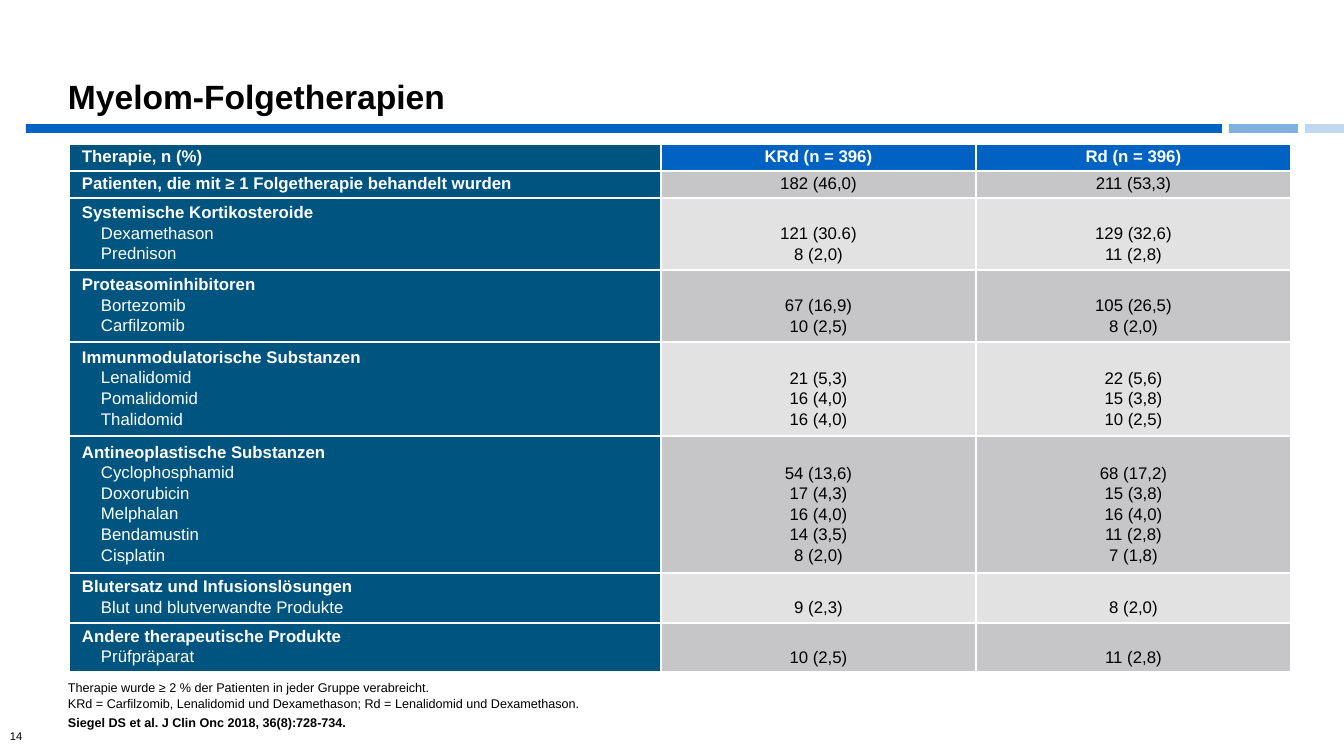
"""Builds the slide on follow-up myeloma therapies."""
from lxml.etree import SubElement as Sub
from pptx import Presentation
from pptx.dml.color import RGBColor as Rgb
from pptx.enum.shapes import MSO_SHAPE as Kind
from pptx.enum.text import MSO_ANCHOR as Anchor, PP_ALIGN as Align
from pptx.oxml.ns import qn
from pptx.util import Pt

THEME = {
    "face": "Arial", "black": "000000", "white": "FFFFFF",
    "blue": "0063C3", "teal": "005480", "dark": "C6C5C7", "pale": "E3E2E3",
    "title": 24, "body": 12, "note": 9, "page": 8, "rule": 2.25,
}
WIDE, HIGH = 1344, 756
SCALE = 12192000 / WIDE


def px(num):
    return round(num * SCALE)


def write(frame, lines, size, color, line=1.0, form=None):
    frame.word_wrap = True
    for i, (text, bold, after, dent) in enumerate(lines):
        par = frame.paragraphs[0] if i == 0 else frame.add_paragraph()
        if dent:
            par._p.get_or_add_pPr().set("marL", str(px(dent)))
        look = {"line_spacing": line, "space_after": Pt(after), **(form or {})}
        for key, val in look.items():
            setattr(par, key, val)
        run = par.add_run()
        run.text = text
        font = {"name": THEME["face"], "size": Pt(THEME[size]), "bold": bold}
        for key, val in font.items():
            setattr(run.font, key, val)
        run.font.color.rgb = Rgb.from_string(THEME[color])


deck = Presentation()
deck.slide_width, deck.slide_height = px(WIDE), px(HIGH)
slide = deck.slides.add_slide(deck.slide_layouts[6])
shapes = slide.shapes

for left, width, alpha in [(26, 1196, 100), (1229, 69, 50), (1305, 39, 25)]:
    bar = shapes.add_shape(Kind.RECTANGLE, px(left), px(124), px(width), px(9))
    bar.shadow.inherit = False
    bar.line.fill.background()
    bar.fill.solid()
    bar.fill.fore_color.rgb = Rgb.from_string(THEME["blue"])
    if alpha < 100:
        tint = bar._element.spPr.find(qn("a:solidFill"))[0]
        Sub(tint, qn("a:alpha")).set("val", str(alpha * 1000))

notes = [
    ("Therapie wurde ≥ 2 % der Patienten in jeder Gruppe verabreicht.", False, 0, 0),
    ("KRd = Carfilzomib, Lenalidomid und Dexamethason; "
     "Rd = Lenalidomid und Dexamethason.", False, 3, 0),
    ("Siegel DS et al. J Clin Onc 2018, 36(8):728-734.", True, 0, 0),
]
boxes = [
    ((58, 0, 1235, 122), [("Myelom-Folgetherapien", True, 0, 0)], "title", 0.9, Anchor.BOTTOM),
    ((58, 675, 1114, 60), notes, "note", 1.0, Anchor.BOTTOM),
    ((0, 724, 67, 24), [("14", False, 0, 0)], "page", 1.0, Anchor.TOP),
]
for place, lines, size, line, anchor in boxes:
    frame = shapes.add_textbox(*map(px, place)).text_frame
    frame.vertical_anchor = anchor
    write(frame, lines, size, "black", line)

rows = [
    (27, ["Therapie, n (%)"], ["KRd (n = 396)"], ["Rd (n = 396)"]),
    (27, ["Patienten, die mit ≥ 1 Folgetherapie behandelt wurden"],
     ["182 (46,0)"], ["211 (53,3)"]),
    (72, ["Systemische Kortikosteroide", "Dexamethason", "Prednison"],
     ["121 (30.6)", "8 (2,0)"], ["129 (32,6)", "11 (2,8)"]),
    (72, ["Proteasominhibitoren", "Bortezomib", "Carfilzomib"],
     ["67 (16,9)", "10 (2,5)"], ["105 (26,5)", "8 (2,0)"]),
    (94, ["Immunmodulatorische Substanzen", "Lenalidomid", "Pomalidomid", "Thalidomid"],
     ["21 (5,3)", "16 (4,0)", "16 (4,0)"], ["22 (5,6)", "15 (3,8)", "10 (2,5)"]),
    (137, ["Antineoplastische Substanzen", "Cyclophosphamid", "Doxorubicin",
           "Melphalan", "Bendamustin", "Cisplatin"],
     ["54 (13,6)", "17 (4,3)", "16 (4,0)", "14 (3,5)", "8 (2,0)"],
     ["68 (17,2)", "15 (3,8)", "16 (4,0)", "11 (2,8)", "7 (1,8)"]),
    (50, ["Blutersatz und Infusionslösungen", "Blut und blutverwandte Produkte"],
     ["9 (2,3)"], ["8 (2,0)"]),
    (49, ["Andere therapeutische Produkte", "Prüfpräparat"],
     ["10 (2,5)"], ["11 (2,8)"]),
]
cols = [592, 315, 315]
tall = sum(row[0] for row in rows)
grid = shapes.add_table(len(rows), len(cols), px(69), px(144), px(sum(cols)), px(tall)).table
for col, width in zip(grid.columns, cols):
    col.width = px(width)

for r, (height, *parts) in enumerate(rows):
    grid.rows[r].height = px(height)
    for c, texts in enumerate(parts):
        cell = grid.cell(r, c)
        head, label = r == 0, c == 0
        side = 13 if head or label else 4
        drop = 0 if label or len(parts[0]) == 1 else 21
        form = {
            "margin_left": px(side), "margin_right": px(side),
            "margin_top": px(4 + drop), "margin_bottom": px(4),
            "vertical_anchor": Anchor.MIDDLE,
        }
        for key, val in form.items():
            setattr(cell, key, val)
        props = cell._tc.get_or_add_tcPr()
        for edge in ("lnL", "lnR", "lnT", "lnB"):
            rule = Sub(props, qn(f"a:{edge}"), w=str(Pt(THEME["rule"])))
            Sub(Sub(rule, qn("a:solidFill")), qn("a:srgbClr"), val=THEME["white"])
        fill = "teal" if label else "blue" if head else "pale" if r % 2 == 0 else "dark"
        cell.fill.solid()
        cell.fill.fore_color.rgb = Rgb.from_string(THEME[fill])
        lines = [(text, head or label and i == 0, 0 if head else 2, 19 if label and i else 0)
                 for i, text in enumerate(texts)]
        write(cell.text_frame, lines, "body", "white" if head or label else "black", 0.94,
              {"alignment": Align.LEFT if label else Align.CENTER})

deck.save("out.pptx")
